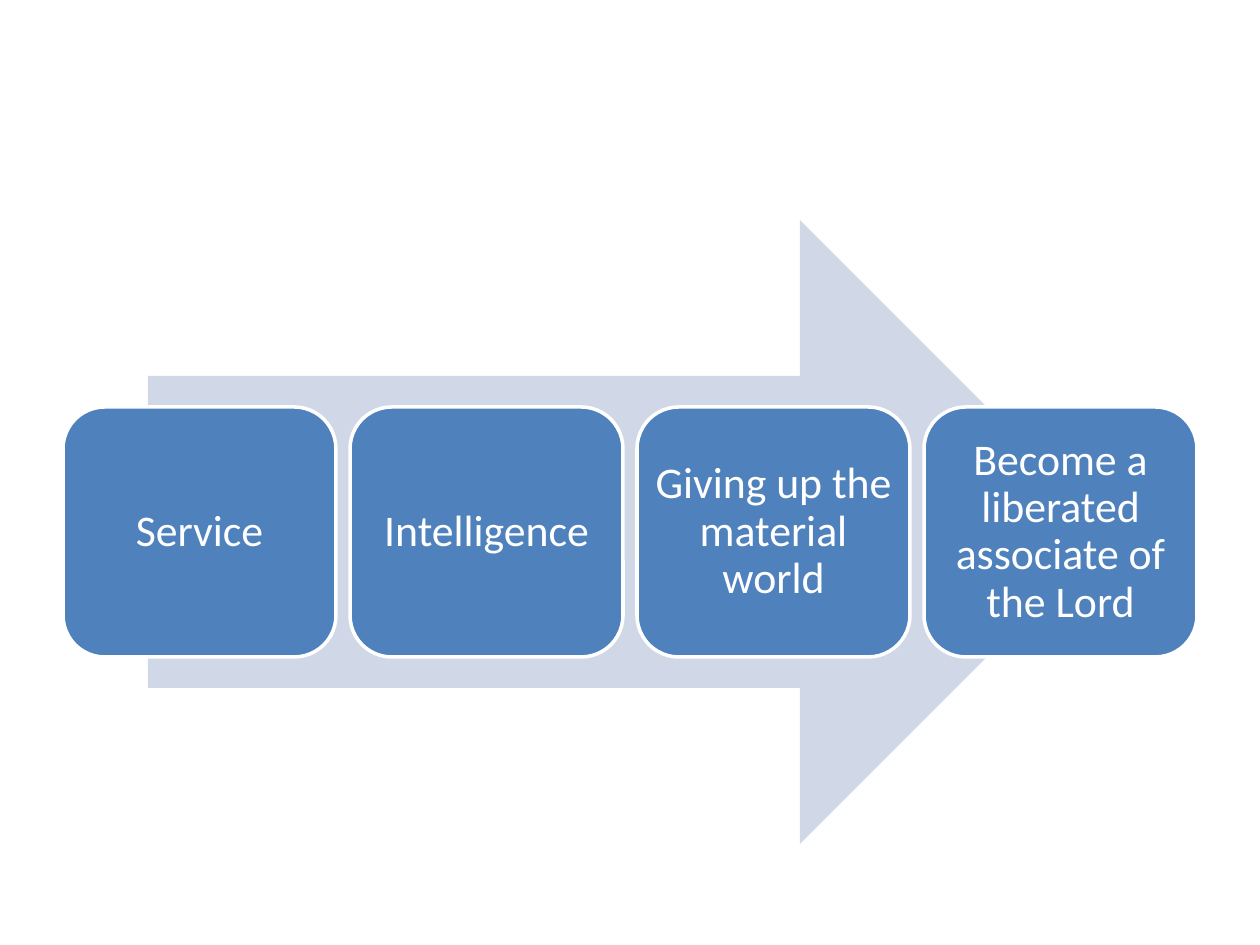
"""Build a slide of four steps along a wide arrow."""
from dataclasses import dataclass

from pptx import Presentation
from pptx.dml.color import RGBColor
from pptx.enum.shapes import MSO_SHAPE
from pptx.enum.text import MSO_ANCHOR, PP_ALIGN
from pptx.util import Pt

ARROW = MSO_SHAPE.RIGHT_ARROW
ROUND = MSO_SHAPE.ROUNDED_RECTANGLE
MIDDLE = MSO_ANCHOR.MIDDLE
CENTER = PP_ALIGN.CENTER
SCALE = 914400 / 126


@dataclass
class Theme:
    pale: RGBColor = RGBColor(0xD0, 0xD8, 0xE8)
    blue: RGBColor = RGBColor(0x4F, 0x81, 0xBD)
    white: RGBColor = RGBColor(0xFF, 0xFF, 0xFF)
    font: str = "Calibri"
    size: Pt = Pt(25)
    edge: Pt = Pt(2)


def px(n):
    return round(n * SCALE)


def add(kind, left, top, width, height, color):
    shape = slide.shapes.add_shape(kind, px(left), px(top), px(width), px(height))
    shape.shadow.inherit = False
    shape.fill.solid()
    shape.fill.fore_color.rgb = color
    return shape


theme = Theme()
deck = Presentation()
deck.slide_width, deck.slide_height = px(1260), px(945)
slide = deck.slides.add_slide(deck.slide_layouts[6])

arrow = add(ARROW, 148, 220, 964, 624, theme.pale)
arrow.line.fill.background()

steps = [
    "Service",
    "Intelligence",
    "Giving up the material world",
    "Become a liberated associate of the Lord",
]
left, top, width, height, gap = 63, 407, 273, 250, 14

for i, text in enumerate(steps):
    card = add(ROUND, left + i * (width + gap), top, width, height, theme.blue)
    card.line.color.rgb = theme.white
    card.line.width = theme.edge
    frame = card.text_frame
    frame.word_wrap = True
    frame.vertical_anchor = MIDDLE
    frame.margin_left = frame.margin_right = 0
    frame.margin_top = frame.margin_bottom = 0
    para = frame.paragraphs[0]
    para.text = text
    para.alignment = CENTER
    para.line_spacing = 0.9
    para.font.name = theme.font
    para.font.size = theme.size
    para.font.color.rgb = theme.white

deck.save("out.pptx")
